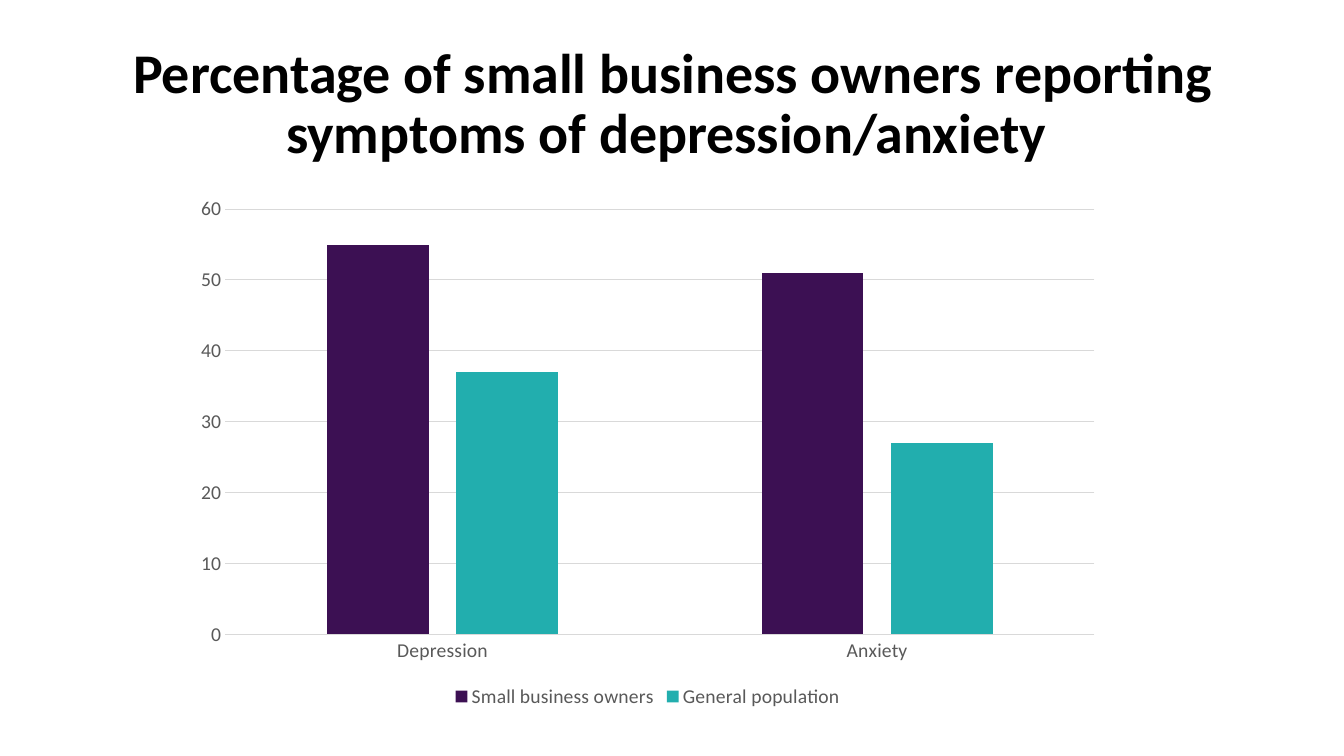
from pptx import Presentation
from pptx.chart.data import CategoryChartData
from pptx.dml.color import RGBColor
from pptx.enum.chart import XL_CHART_TYPE, XL_LEGEND_POSITION, XL_TICK_MARK
from pptx.enum.text import MSO_ANCHOR, PP_ALIGN
from pptx.util import Pt

# Content
TITLE = "Percentage of small business owners reporting symptoms of depression/anxiety "
CATEGORIES = ["Depression", "Anxiety"]
PURPLE = RGBColor(0x3C, 0x10, 0x53)
TEAL = RGBColor(0x22, 0xAE, 0xAE)
SERIES = [
    ("Small business owners", (55, 51), PURPLE),
    ("General population", (37, 27), TEAL),
]

# Style and layout, 100 px to the inch
BLACK = RGBColor(0, 0, 0)
GREY = RGBColor(0x59, 0x59, 0x59)
LIGHT_GREY = RGBColor(0xD9, 0xD9, 0xD9)
FONT = "Calibri"
EMU_PER_PX = 9144
SLIDE_SIZE = (1333, 750)
TITLE_BOX = (92, 40, 1150, 129)
CHART_BOX = (181, 185, 923, 522)


def to_emu(lengths):
    return [length * EMU_PER_PX for length in lengths]


def style_font(font, size, color, bold=False):
    font.name = FONT
    font.size = Pt(size)
    font.bold = bold
    font.color.rgb = color


def style_line(line):
    line.color.rgb = LIGHT_GREY
    line.width = Pt(0.75)


presentation = Presentation()
presentation.slide_width, presentation.slide_height = to_emu(SLIDE_SIZE)
slide = presentation.slides.add_slide(presentation.slide_layouts[6])

# Title
text_frame = slide.shapes.add_textbox(*to_emu(TITLE_BOX)).text_frame
text_frame.word_wrap = True
text_frame.vertical_anchor = MSO_ANCHOR.MIDDLE
paragraph = text_frame.paragraphs[0]
paragraph.text = TITLE
paragraph.alignment = PP_ALIGN.CENTER
paragraph.line_spacing = 0.9
style_font(paragraph.font, 40, BLACK, bold=True)

# Chart
chart_data = CategoryChartData()
chart_data.categories = CATEGORIES
for name, values, _ in SERIES:
    chart_data.add_series(name, values)
chart = slide.shapes.add_chart(
    XL_CHART_TYPE.COLUMN_CLUSTERED, *to_emu(CHART_BOX), chart_data
).chart
chart.has_title = False
style_font(chart.font, 14, GREY)

# Columns
plot = chart.plots[0]
plot.vary_by_categories = False
plot.gap_width = 200
plot.overlap = -27
for series, (_, _, color) in zip(plot.series, SERIES):
    series.format.fill.solid()
    series.format.fill.fore_color.rgb = color

# Axes
for axis in (chart.category_axis, chart.value_axis):
    axis.major_tick_mark = XL_TICK_MARK.NONE
    axis.minor_tick_mark = XL_TICK_MARK.NONE
    style_font(axis.tick_labels.font, 14, GREY)
style_line(chart.category_axis.format.line)
value_axis = chart.value_axis
value_axis.minimum_scale, value_axis.maximum_scale = 0, 60
value_axis.major_unit = 10
value_axis.format.line.fill.background()
value_axis.has_major_gridlines = True
style_line(value_axis.major_gridlines.format.line)

# Legend
chart.has_legend = True
chart.legend.position = XL_LEGEND_POSITION.BOTTOM
chart.legend.include_in_layout = False
style_font(chart.legend.font, 14, GREY)

presentation.save("out.pptx")
